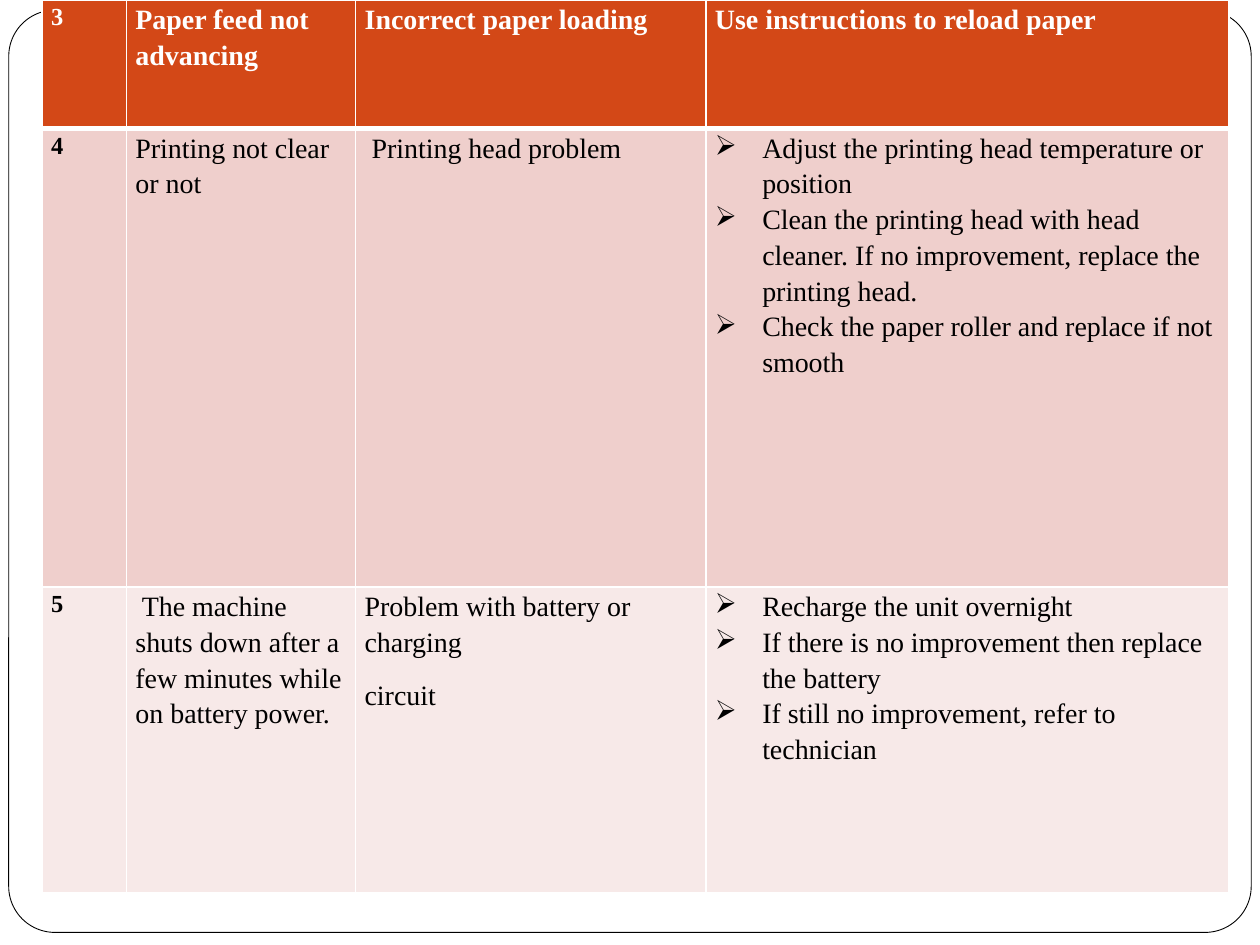
from lxml.etree import SubElement
from pptx import Presentation
from pptx.dml.color import RGBColor
from pptx.enum.shapes import MSO_SHAPE
from pptx.oxml.ns import qn
from pptx.util import Pt

COLORS = {
    "white": "FFFFFF",
    "black": "000000",
    "header": "D34817",
    "band_dark": "EFCFCC",
    "band_light": "F7E9E8",
}
FONT = "Times New Roman"
COLUMN_WIDTHS = [48.2, 131, 200.2, 298.8]
ROWS = [
    {
        "height": 73.4, "fill": "header", "text": "white", "top": 1, "bottom": 3,
        "cells": [["3"], ["Paper feed not advancing"], ["Incorrect paper loading"],
                  ["Use instructions to reload paper"]],
    },
    {
        "height": 262, "fill": "band_dark", "text": "black", "top": 3, "bottom": 1,
        "cells": [["4"], ["Printing not clear or not"], [" Printing head problem"], [
            "Adjust the printing head temperature or position",
            "Clean the printing head with head cleaner. If no improvement, "
            "replace the printing head.",
            "Check the paper roller and replace if not smooth",
        ]],
    },
    {
        "height": 174.6, "fill": "band_light", "text": "black", "top": 1, "bottom": 1,
        "cells": [["5"],
                  [" The machine shuts down after a few minutes while on battery power."],
                  ["Problem with battery or charging", "circuit"], [
            "Recharge the unit overnight",
            "If there is no improvement then replace the battery",
            "If still no improvement, refer to technician",
        ]],
    },
]


def color(name):
    """Return the named palette colour."""
    return RGBColor.from_string(COLORS[name])


def set_attributes(target, values):
    """Set each named value on the target object."""
    for name, value in values.items():
        setattr(target, name, value)


def add_frame(slide, left, top, width, height):
    """Draw the rounded slide frame in the given box."""
    frame = slide.shapes.add_shape(
        MSO_SHAPE.ROUNDED_RECTANGLE, Pt(left), Pt(top), Pt(width), Pt(height))
    frame.adjustments[0] = 0.05
    frame.shadow.inherit = False
    frame.fill.solid()
    frame.fill.fore_color.rgb = color("white")
    frame.line.color.rgb = color("black")
    frame.line.width = Pt(0.5)


def set_borders(cell, top, bottom):
    """Give a cell white borders with the given top and bottom widths."""
    properties = cell._tc.get_or_add_tcPr()
    for side, width in {"L": 1, "R": 1, "T": top, "B": bottom}.items():
        line = SubElement(properties, qn(f"a:ln{side}"), w=str(Pt(width)))
        fill = SubElement(line, qn("a:solidFill"))
        SubElement(fill, qn("a:srgbClr"), val=COLORS["white"])


def add_bullet(paragraph):
    """Turn a paragraph into an arrow-bulleted item with a hanging indent."""
    properties = paragraph._p.get_or_add_pPr()
    indent = Pt(27)
    properties.set("marL", str(indent))
    properties.set("indent", str(-indent))
    SubElement(properties, qn("a:buChar"), char="➢")


def fill_cell(cell, texts, row, size, bold, bulleted):
    """Write and format the paragraphs, borders and fill of one cell."""
    set_attributes(cell, {"margin_left": Pt(5.2), "margin_right": Pt(5.2),
                          "margin_top": Pt(0), "margin_bottom": Pt(0)})
    set_borders(cell, row["top"], row["bottom"])
    cell.fill.solid()
    cell.fill.fore_color.rgb = color(row["fill"])
    cell.text = "\n".join(texts)
    for paragraph in cell.text_frame.paragraphs:
        spacing = Pt(0) if bulleted else Pt(10)
        set_attributes(paragraph, {"line_spacing": 1.15, "space_after": spacing})
        if bulleted:
            add_bullet(paragraph)
        for run in paragraph.runs:
            set_attributes(run.font, {"name": FONT, "size": Pt(size), "bold": bold})
            run.font.color.rgb = color(row["text"])


def add_fault_table(slide, left, top):
    """Place the troubleshooting table with its corner at the given point."""
    height = sum(row["height"] for row in ROWS)
    table = slide.shapes.add_table(
        len(ROWS), len(COLUMN_WIDTHS), Pt(left), Pt(top),
        Pt(sum(COLUMN_WIDTHS)), Pt(height)).table
    for column, width in zip(table.columns, COLUMN_WIDTHS):
        column.width = Pt(width)
    for row_index, row in enumerate(ROWS):
        table.rows[row_index].height = Pt(row["height"])
        for column_index, texts in enumerate(row["cells"]):
            is_number = column_index == 0
            is_header = row_index == 0
            fill_cell(
                table.cell(row_index, column_index), texts, row,
                size=14 if is_number else 16,
                bold=is_number or is_header,
                bulleted=column_index == 3 and not is_header)


def main():
    """Build and save the troubleshooting slide."""
    presentation = Presentation()
    set_attributes(presentation, {"slide_width": Pt(720), "slide_height": Pt(540)})
    slide = presentation.slides.add_slide(presentation.slide_layouts[6])
    add_frame(slide, 5, 5.8, 710, 527)
    add_fault_table(slide, 24, 0)
    presentation.save("out.pptx")


if __name__ == "__main__":
    main()
